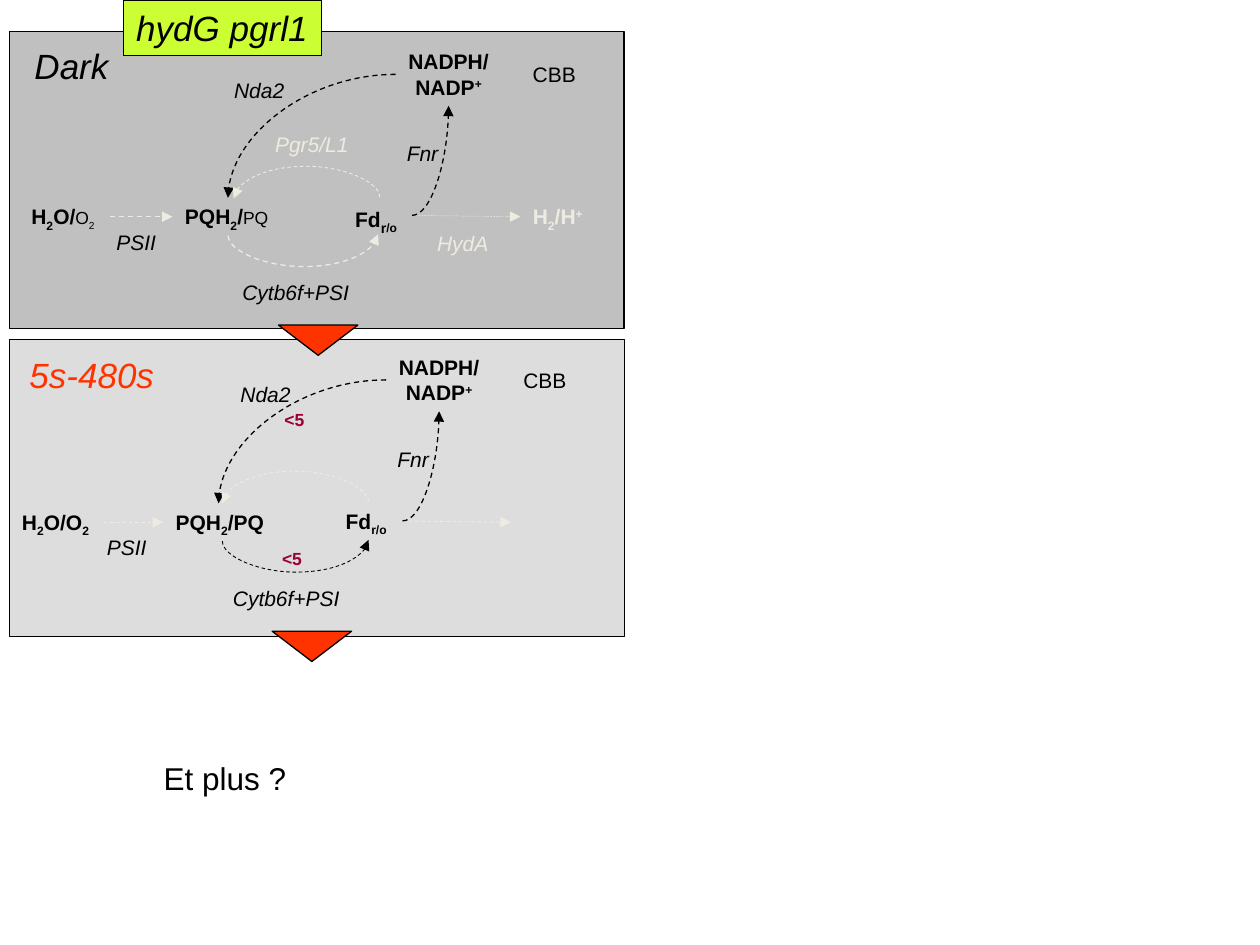
"""Build the hydG pgrl1 electron-flow slide with its dark and 5s-480s panels."""
from lxml.etree import SubElement
from pptx import Presentation
from pptx.dml.color import RGBColor
from pptx.enum.dml import MSO_LINE
from pptx.enum.shapes import MSO_CONNECTOR as Connector, MSO_SHAPE as Shape
from pptx.enum.text import MSO_AUTO_SIZE as AutoSize, PP_ALIGN as Align
from pptx.oxml.ns import qn
from pptx.util import Inches, Pt

BLACK = RGBColor(0x00, 0x00, 0x00)
CREAM = RGBColor(0xEE, 0xEC, 0xE1)
DARK_GREY = RGBColor(0xC0, 0xC0, 0xC0)
LIGHT_GREY = RGBColor(0xDD, 0xDD, 0xDD)
LIME = RGBColor(0xCC, 0xFF, 0x33)
ORANGE = RGBColor(0xFF, 0x33, 0x00)
CRIMSON = RGBColor(0x99, 0x00, 0x33)
SUB, SUPER = -25, 30

presentation = Presentation()
presentation.slide_width, presentation.slide_height = Inches(10), Inches(7.5)
slide = presentation.slides.add_slide(presentation.slide_layouts[6])
COLUMN = presentation.slide_width / 100
ROW = presentation.slide_height / 75


def write(shape, lines, size, color=BLACK, bold=False, italic=False):
    frame = shape.text_frame
    frame.word_wrap = False
    frame.auto_size = AutoSize.SHAPE_TO_FIT_TEXT
    for index, runs in enumerate(lines):
        paragraph = frame.add_paragraph() if index else frame.paragraphs[0]
        paragraph.alignment = Align.CENTER if len(lines) > 1 else Align.LEFT
        font = paragraph.font
        font.name, font.size, font.bold, font.italic = "Arial", Pt(size), bold, italic
        font.color.rgb = color
        for text, baseline, *run_style in runs:
            run = paragraph.add_run()
            run.text = text
            if baseline:
                run.font._element.set("baseline", str(baseline * 1000))
            if run_style:
                run.font.size, run.font.bold = Pt(run_style[0]), run_style[1]


def add_arrow(begin, end, color, width, preset="line", rotation=0, bend=None):
    kind = Connector.STRAIGHT if preset == "line" else Connector.CURVE
    (x1, y1), (x2, y2) = begin, end
    connector = slide.shapes.add_connector(
        kind, int(x1 * COLUMN), int(y1 * ROW), int(x2 * COLUMN), int(y2 * ROW))
    connector.line.color.rgb = color
    connector.line.width = Pt(width)
    connector.line.dash_style = MSO_LINE.DASH
    properties = connector._element.spPr
    SubElement(connector.line._get_or_add_ln(), qn("a:tailEnd"), type="triangle")
    SubElement(properties, qn("a:effectLst"))
    geometry = properties.find(qn("a:prstGeom"))
    geometry.set("prst", preset)
    if rotation:
        properties.find(qn("a:xfrm")).set("rot", str(rotation * 60000))
    if bend:
        SubElement(geometry.find(qn("a:avLst")), qn("a:gd"),
                   name="adj1", fmla=f"val {bend * 100000}")
    return connector


blocks = [
    (Shape.RECTANGLE, 0.73, 2.5, 48.8, 23.6, DARK_GREY, 0),
    (Shape.RECTANGLE, 0.76, 26.93, 48.8, 23.6, LIGHT_GREY, 0),
    (Shape.ISOSCELES_TRIANGLE, 22.1, 25.8, 6.3, 2.4, ORANGE, 180),
    (Shape.ISOSCELES_TRIANGLE, 21.6, 50.1, 6.3, 2.4, ORANGE, 180),
    (Shape.RECTANGLE, 9.83, 0, 15.7, 4.43, LIME, 0),
]
for kind, left, top, width, height, fill, rotation in blocks:
    block = slide.shapes.add_shape(
        kind, int(left * COLUMN), int(top * ROW), int(width * COLUMN), int(height * ROW))
    block.shadow.inherit = False
    block.fill.solid()
    block.fill.fore_color.rgb = fill
    block.line.color.rgb = BLACK
    block.line.width = Pt(0.75)
    block.rotation = rotation
write(block, [[("hydG pgrl1", 0)]], 20, italic=True)

PLAIN, BOLD, ITALIC = (False, False), (True, False), (False, True)
small = (10, False)
panels = [
    dict(shift=(0, 0),
         water=[("H", 0), ("2", SUB), ("O/", 0), ("O", 0, *small), ("2", SUB, *small)],
         quinone=[("PQH", 0), ("2", SUB), ("/", 0), ("PQ", 0, *small)],
         ferredoxin=[("Fd", 0), ("r", SUB, 14, True), ("/o", SUB)],
         widths=(7.2, 8.7), lines=(0.75, 0.25),
         inactive=[
             ("hydrogen", 41.3, 15.7, 6.1, 3,
              [[("H", 0), ("2", SUB), ("/H", 0), ("+", SUPER)]], CREAM, BOLD),
             ("Pgr5", 20.85, 9.95, 8, 3, [[("Pgr5/L1", 0)]], CREAM, ITALIC),
             ("HydA", 33.7, 17.8, 6.1, 3, [[("HydA", 0)]], CREAM, ITALIC)],
         arcs=[(24.3, 9.9, 11.6, 270, CREAM, 0.5), (24, 12.7, 11.9, 90, CREAM, 0.75)]),
    dict(shift=(-0.75, 24.25),
         water=[("H", 0), ("2", SUB), ("O/O", 0), ("2", SUB)],
         quinone=[("PQH", 0), ("2", SUB), ("/PQ", 0)],
         ferredoxin=[("Fd", 0), ("r/o", SUB)],
         widths=(7.5, 9.1), lines=(0.5, 0.5), inactive=[],
         arcs=[(23.4, 34.1, 11.6, 270, CREAM, 0.5), (23.4, 37.1, 11.6, 90, BLACK, 0.5)]),
]
for panel in panels:
    dx, dy = panel["shift"]
    labels = [
        ("water", 1.5, 15.7, panel["widths"][0], 3, [panel["water"]], BLACK, BOLD),
        ("quinone", 13.7, 15.7, panel["widths"][1], 3, [panel["quinone"]], BLACK, BOLD),
        ("ferredoxin", 27.2, 15.6, 5.5, 3, [panel["ferredoxin"]], BLACK, BOLD),
        ("NADPH", 31.4, 3.4, 8.4, 5,
         [[("NADPH/", 0)], [("NADP", 0), ("+", SUPER)]], BLACK, BOLD),
        ("PSII", 8.25, 17.7, 5.2, 3, [[("PSII", 0)]], BLACK, ITALIC),
        ("Cytb6f", 18.25, 21.7, 10.5, 3, [[("Cytb6f+PSI", 0)]], BLACK, ITALIC),
        ("Fnr", 31.3, 10.7, 4.5, 3, [[("Fnr", 0)]], BLACK, ITALIC),
        ("CBB", 41.3, 4.4, 5.4, 3, [[("CBB", 0)]], BLACK, PLAIN),
    ]
    boxes = {}
    for name, left, top, width, height, lines, color, style in labels + panel["inactive"]:
        boxes[name] = slide.shapes.add_textbox(
            int((left + dx) * COLUMN), int((top + dy) * ROW),
            int(width * COLUMN), int(height * ROW))
        write(boxes[name], lines, 12, color, *style)

    flows = [("water", "quinone", 8.8, 13.7), ("ferredoxin", "hydrogen", 32.7, 41.3)]
    for (source, target, start, stop), weight in zip(flows, panel["lines"]):
        flow = add_arrow((start + dx, 17.2 + dy), (stop + dx, 17.2 + dy), CREAM, weight)
        flow.begin_connect(boxes[source], 3)
        if target in boxes:
            flow.end_connect(boxes[target], 1)
    for begin, end in [((32.7, 17.1), (35.6, 8.4)), ((31.4, 5.9), (18.1, 15.7))]:
        add_arrow((begin[0] + dx, begin[1] + dy), (end[0] + dx, end[1] + dy),
                  BLACK, 0.75, "curvedConnector2")
    for left, top, height, rotation, color, weight in panel["arcs"]:
        add_arrow((left + 0.1, top + height), (left, top), color, weight,
                  "curvedConnector3", rotation, -25)

notes = [
    ("Dark", 1.75, 3.05, 7.9, 4.3, 20, BLACK, ITALIC),
    ("5s-480s", 1.35, 27.6, 11.9, 4.3, 20, ORANGE, ITALIC),
    ("Nda2", 17.6, 5.7, 6, 3, 12, BLACK, ITALIC),
    ("Nda2", 18.1, 29.8, 6, 3, 12, BLACK, ITALIC),
    ("<5", 21.4, 43, 3.6, 2.7, 10, CRIMSON, BOLD),
    ("<5", 21.6, 32, 3.6, 2.7, 10, CRIMSON, BOLD),
    ("Et plus ?", 12, 59.75, 11.7, 4, 18, BLACK, PLAIN),
]
for text, left, top, width, height, size, color, style in notes:
    note = slide.shapes.add_textbox(
        int(left * COLUMN), int(top * ROW), int(width * COLUMN), int(height * ROW))
    write(note, [[(text, 0)]], size, color, *style)

presentation.save("out.pptx")
